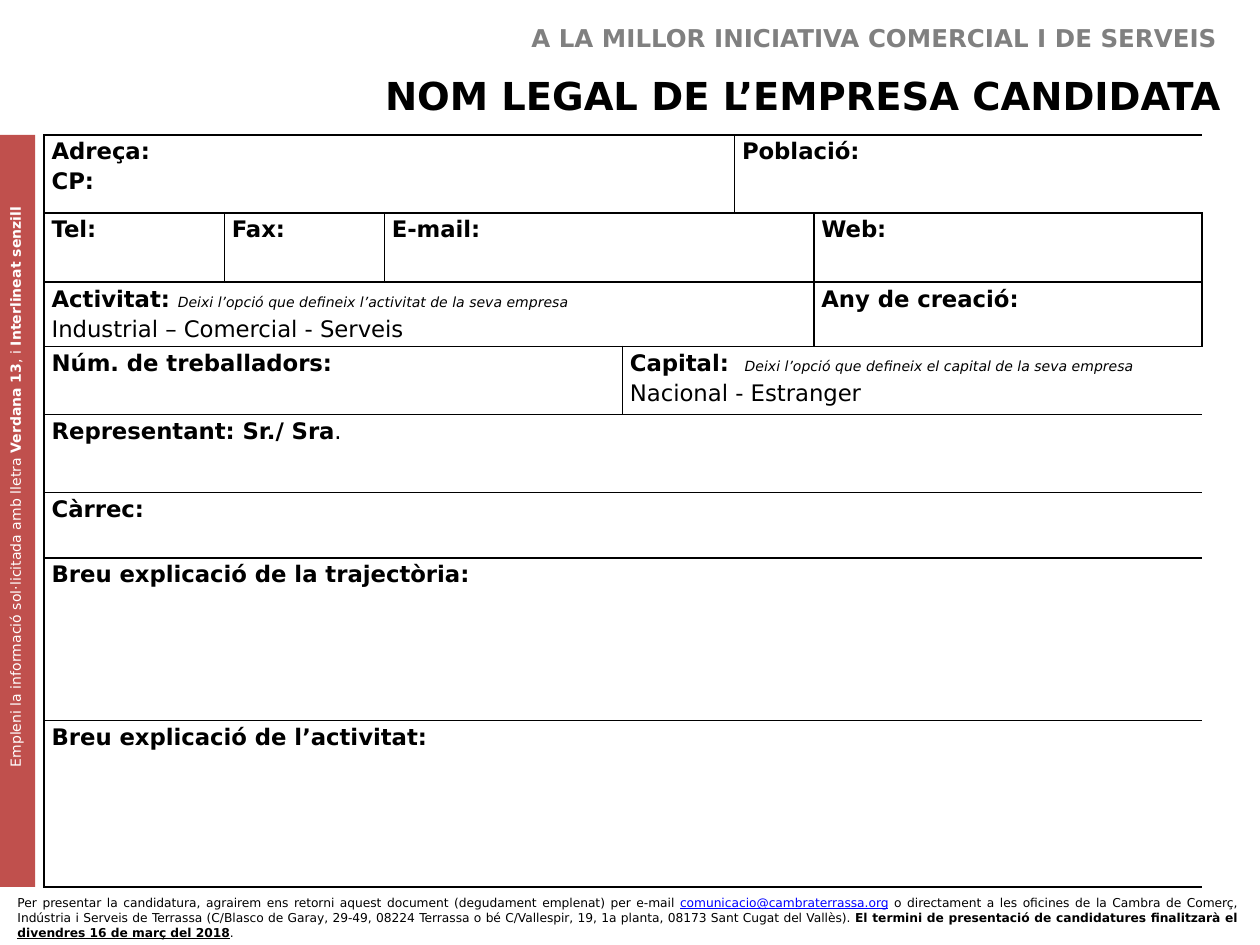
import pptx
import pptx.util
from pptx.dml.color import RGBColor
from pptx.enum.shapes import MSO_SHAPE
from pptx.enum.text import MSO_ANCHOR, PP_ALIGN
from pptx.oxml import parse_xml
from pptx.oxml.ns import nsdecls

FONT = "DejaVu Sans"
COLORS = {"black": "000000", "grey": "808080", "white": "FFFFFF",
          "red": "C0504D", "link": "0000FF"}
NO_STYLE = "{2D5ABB26-0587-4C30-8999-92F81FD0307C}"

# Runs are (text, style): b bold, i italic, u underlined, l link colour, s small
HEADER = [("A LA MILLOR INICIATIVA COMERCIAL I DE SERVEIS", "b")]
TITLE = [("NOM LEGAL DE L’EMPRESA CANDIDATA ", "b")]
SIDE_NOTE = [("Empleni la informació sol·licitada amb lletra ", ""),
             ("Verdana 13", "b"), (", i ", ""), ("Interlineat senzill", "b")]
FOOTER = [
    ("Per presentar la candidatura, agrairem ens retorni aquest document "
     "(degudament emplenat) per e-mail ", ""),
    ("comunicacio@cambraterrassa.org", "lu"),
    (" o directament a les oficines de la Cambra de Comerç, Indústria i Serveis "
     "de Terrassa (C/Blasco de Garay, 29-49, 08224 Terrassa o bé C/Vallespir, 19, "
     "1a planta, 08173 Sant Cugat del Vallès). ", ""),
    ("El termini de presentació de candidatures finalitzarà el ", "b"),
    ("divendres 16 de març del 2018", "bu"), (".", "")]

COLS = [1.43, 1.27, 1.89, 0.89, 0.63, 3.08]
# Each row: height, then fields as (columns spanned, paragraphs)
ROWS = [
    (0.62, [(4, [[("Adreça:", "b")], [("CP:", "b")]]),
            (2, [[("Població:", "b")]])]),
    (0.55, [(1, [[("Tel:", "b")]]), (1, [[("Fax:", "b")]]),
            (3, [[("E-mail:", "b")]]), (1, [[("Web:", "b")]])]),
    (0.51, [(5, [[("Activitat: ", "b"),
                  ("Deixi l’opció que defineix l’activitat de la seva empresa", "is")],
                 [("Industrial – Comercial - Serveis", "")]]),
            (1, [[("Any de creació:", "b")]])]),
    (0.54, [(3, [[("Núm. de treballadors:", "b")]]),
            (3, [[("Capital:  ", "b"),
                  ("Deixi l’opció que defineix el capital de la seva empresa", "is")],
                 [("Nacional - Estranger", "")]])]),
    (0.62, [(6, [[("Representant: Sr./ Sra", "b"), (".", "")]])]),
    (0.52, [(6, [[("Càrrec:", "b")]])]),
    (1.29, [(6, [[("Breu explicació de la trajectòria:", "b")]])]),
    (1.32, [(6, [[("Breu explicació de l’activitat:", "b")]])]),
]
LEFT, TOP = 0.35, 1.07
HEIGHT = sum(h for h, _ in ROWS)


def inches(*values):
    return [pptx.util.Inches(v) for v in values]


def rgb(name):
    return RGBColor.from_string(COLORS[name])


def add_runs(p, runs, size, color="black"):
    for text, style in runs:
        r = p.add_run()
        r.text = text
        r.font.name = FONT
        r.font.size = pptx.util.Pt(8 if "s" in style else size)
        r.font.bold = "b" in style
        r.font.italic = "i" in style
        r.font.underline = "u" in style
        r.font.color.rgb = rgb("link" if "l" in style else color)


def write(sp, runs, size, color, align):
    tf = sp.text_frame
    tf.word_wrap = True
    tf.vertical_anchor = MSO_ANCHOR.TOP
    tf.paragraphs[0].alignment = align
    add_runs(tf.paragraphs[0], runs, size, color)


def add_rect(s, box, fill):
    sp = s.shapes.add_shape(MSO_SHAPE.RECTANGLE, *inches(*box))
    sp.shadow.inherit = False
    sp.fill.solid()
    sp.fill.fore_color.rgb = rgb(fill)
    sp.line.fill.background()
    return sp


def add_borders(cell, sides):
    tc_pr = cell._tc.get_or_add_tcPr()
    for side in sides:
        tc_pr.append(parse_xml(
            f'<a:ln{side} {nsdecls("a")} w="12700"><a:solidFill>'
            f'<a:srgbClr val="{COLORS["black"]}"/></a:solidFill></a:ln{side}>'))
    cell.fill.background()


def add_form(s):
    frame = s.shapes.add_table(len(ROWS), len(COLS),
                               *inches(LEFT, TOP, sum(COLS), HEIGHT))
    table = frame.table
    table.first_row = table.horz_banding = False
    table._tbl.tblPr[0].text = NO_STYLE
    for col, width in zip(table.columns, COLS):
        col.width = pptx.util.Inches(width)
    for i, (height, fields) in enumerate(ROWS):
        table.rows[i].height = pptx.util.Inches(height)
        first = 0
        for span, paragraphs in fields:
            last = first + span - 1
            for c in range(first, last + 1):
                sides = ["L"] * (c == first) + ["R"] * (c == last) + ["T", "B"]
                add_borders(table.cell(i, c), sides)
            cell = table.cell(i, first)
            if span > 1:
                cell.merge(table.cell(i, last))
            cell.margin_left = cell.margin_right = pptx.util.Inches(0.06)
            cell.margin_top = cell.margin_bottom = 0
            tf = cell.text_frame
            for n, runs in enumerate(paragraphs):
                p = tf.add_paragraph() if n else tf.paragraphs[0]
                p.line_spacing = 1.15
                add_runs(p, runs, 13)
            first = last + 1


def main():
    prs = pptx.Presentation()
    prs.slide_width, prs.slide_height = inches(10, 7.5)
    s = prs.slides.add_slide(prs.slide_layouts[6])

    header = s.shapes.add_textbox(*inches(2.56, 0.13, 7.2, 0.34))
    write(header, HEADER, 14, "grey", PP_ALIGN.RIGHT)
    footer = add_rect(s, (0.04, 7.06, 9.88, 0.4), "white")
    write(footer, FOOTER, 7, "black", PP_ALIGN.JUSTIFY)
    title = s.shapes.add_textbox(*inches(2.8, 0.52, 7.09, 0.47))
    write(title, TITLE, 22, "black", PP_ALIGN.RIGHT)

    add_form(s)
    add_rect(s, (0, TOP, 0.28, HEIGHT), "red")
    note = add_rect(s, (-2.26, 3.73, 4.8, 0.27), "red")
    note.rotation = 270
    write(note, SIDE_NOTE, 8, "white", PP_ALIGN.CENTER)

    prs.save("out.pptx")


if __name__ == "__main__":
    main()
